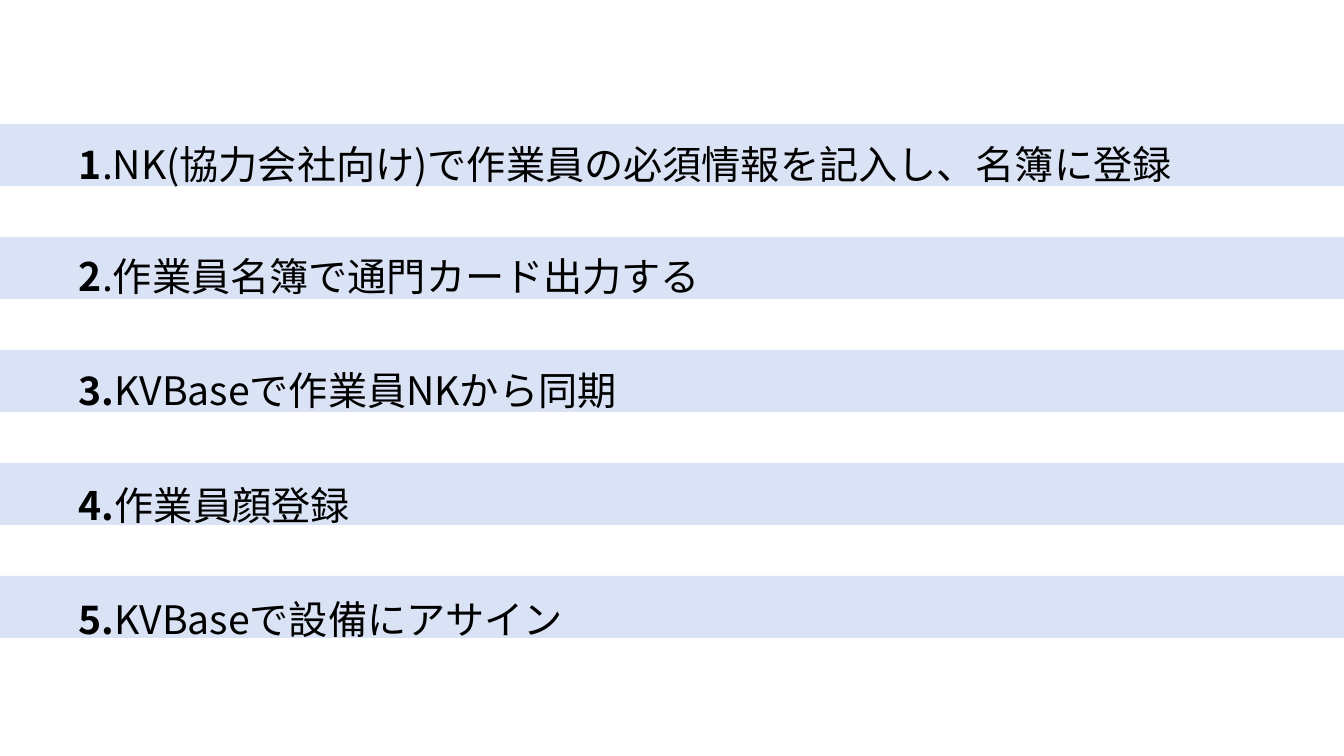
from pptx import Presentation
from pptx.dml.color import RGBColor
from pptx.enum.shapes import MSO_SHAPE
from pptx.enum.text import MSO_ANCHOR
from pptx.oxml.ns import qn
from pptx.util import Emu, Pt
from lxml.etree import SubElement

PX = 914400 / 100.8
BLUE = RGBColor(0xDA, 0xE3, 0xF5)
BLACK = RGBColor(0, 0, 0)
FONT = "Noto Sans CJK JP"


def px(*sizes):
    return [Emu(round(n * PX)) for n in sizes]


def add_run(para, text, size=28, bold=False, color=BLACK):
    run = para.add_run()
    run.text = text
    font = run.font
    font.size, font.bold, font.name = Pt(size), bold, FONT
    font.color.rgb = color
    # Japanese glyphs take the East Asian font
    SubElement(run._r.get_or_add_rPr(), qn("a:ea")).set("typeface", FONT)


prs = Presentation()
prs.slide_width, prs.slide_height = px(1344, 756)
slide = prs.slides.add_slide(prs.slide_layouts[6])

# Steps: text top, bold number, wording
steps = [
    (109, "1", ".NK(協力会社向け)で作業員の必須情報を記入し、名簿に登録"),
    (221, "2", ".作業員名簿で通門カード出力する"),
    (335, "3.", "KVBaseで作業員NKから同期"),
    (450, "4.", "作業員顔登録"),
    (564, "5.", "KVBaseで設備にアサイン"),
]

for row, (top, mark, text) in enumerate(steps):
    # Band across the slide
    band = slide.shapes.add_shape(
        MSO_SHAPE.RECTANGLE, *px(-13, 124 + 113 * row, 1372, 62))
    band.shadow.inherit = False
    band.fill.solid()
    band.fill.fore_color.rgb = BLUE
    band.line.fill.background()

    # Step text
    box = slide.shapes.add_textbox(*px(69, top, 1159, 116))
    frame = box.text_frame
    frame.word_wrap = True
    frame.vertical_anchor = MSO_ANCHOR.MIDDLE
    para = frame.paragraphs[0]
    para.line_spacing = 0.9
    add_run(para, mark, bold=True)
    add_run(para, text)

prs.save("out.pptx")
